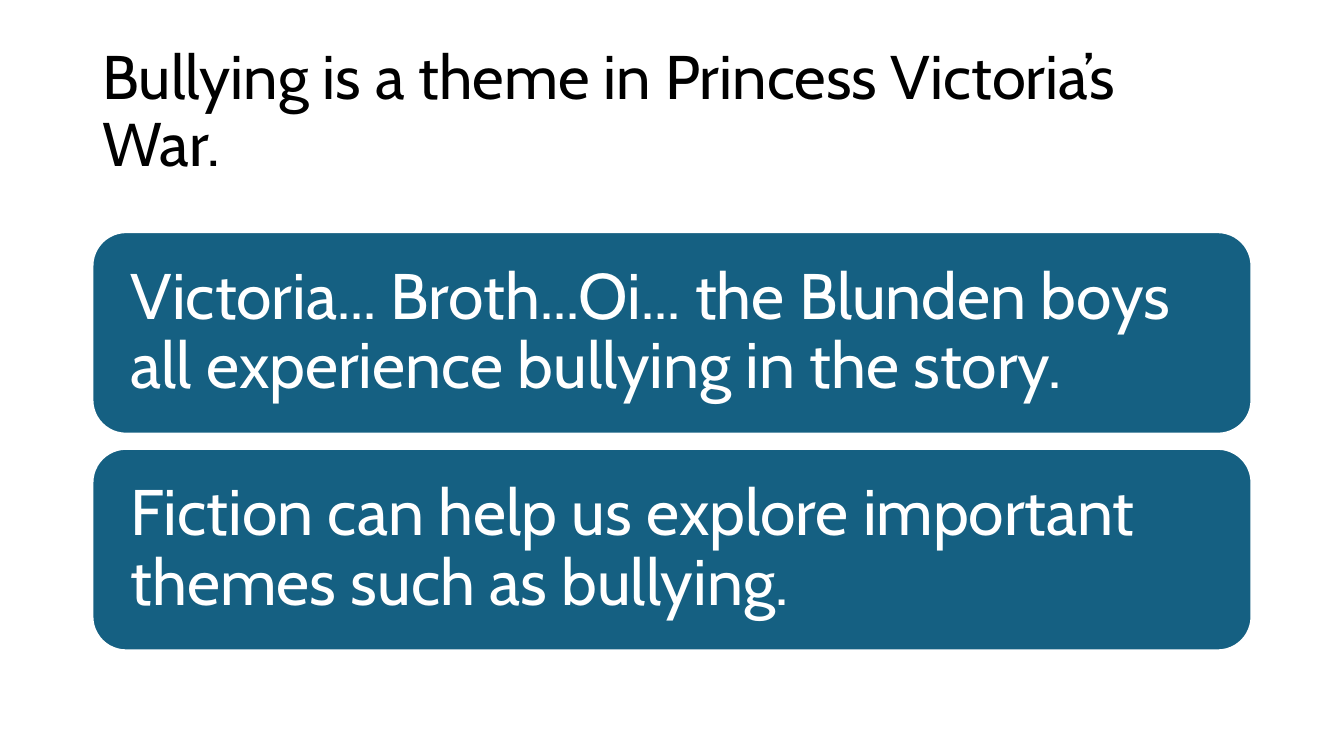
from pptx import Presentation
from pptx.dml.color import RGBColor
from pptx.enum.shapes import MSO_SHAPE
from pptx.enum.text import MSO_ANCHOR, PP_ALIGN
from pptx.util import Cm, Pt

COLORS = {"ink": "000000", "white": "FFFFFF", "teal": "156082"}
LEFT, WIDE = 2.33, 29.21


def color(name):
    return RGBColor.from_string(COLORS[name])


def write(frame, text, size=44, hue="ink", font="Cabin", pad=(0.25, 0.13)):
    frame.word_wrap = True
    frame.vertical_anchor = MSO_ANCHOR.MIDDLE
    frame.margin_left = frame.margin_right = Cm(pad[0])
    frame.margin_top = frame.margin_bottom = Cm(pad[1])
    para = frame.paragraphs[0]
    para.alignment = PP_ALIGN.LEFT
    para.line_spacing = 0.9
    run = para.add_run()
    run.text = text
    run.font.name = font
    run.font.size = Pt(size)
    run.font.color.rgb = color(hue)


class Deck:
    def __init__(self):
        self.show = Presentation()
        self.show.slide_width = Cm(33.87)
        self.show.slide_height = Cm(19.05)
        self.slide = self.show.slides.add_slide(self.show.slide_layouts[6])

    def title(self, text, top, high):
        box = self.slide.shapes.add_textbox(Cm(LEFT), Cm(top), Cm(WIDE), Cm(high))
        write(box.text_frame, text)

    def card(self, text, top, high):
        card = self.slide.shapes.add_shape(
            MSO_SHAPE.ROUNDED_RECTANGLE, Cm(LEFT), Cm(top), Cm(WIDE), Cm(high))
        card.shadow.inherit = False
        card.fill.solid()
        card.fill.fore_color.rgb = color("teal")
        card.line.color.rgb = color("white")
        card.line.width = Pt(1.5)
        write(card.text_frame, text, size=46, hue="white", pad=(0.72, 0.72))


def main():
    deck = Deck()

    # Heading
    deck.title("Bullying is a theme in Princess Victoria’s War.", 1.01, 3.68)

    # Stacked cards
    points = [
        "Victoria... Broth...Oi... the Blunden boys all experience bullying in the story.",
        "Fiction can help us explore important themes such as bullying.",
    ]
    top, high, gap = 5.85, 5.08, 0.38
    for row, text in enumerate(points):
        deck.card(text, top + row * (high + gap), high)

    deck.show.save("out.pptx")


if __name__ == "__main__":
    main()
